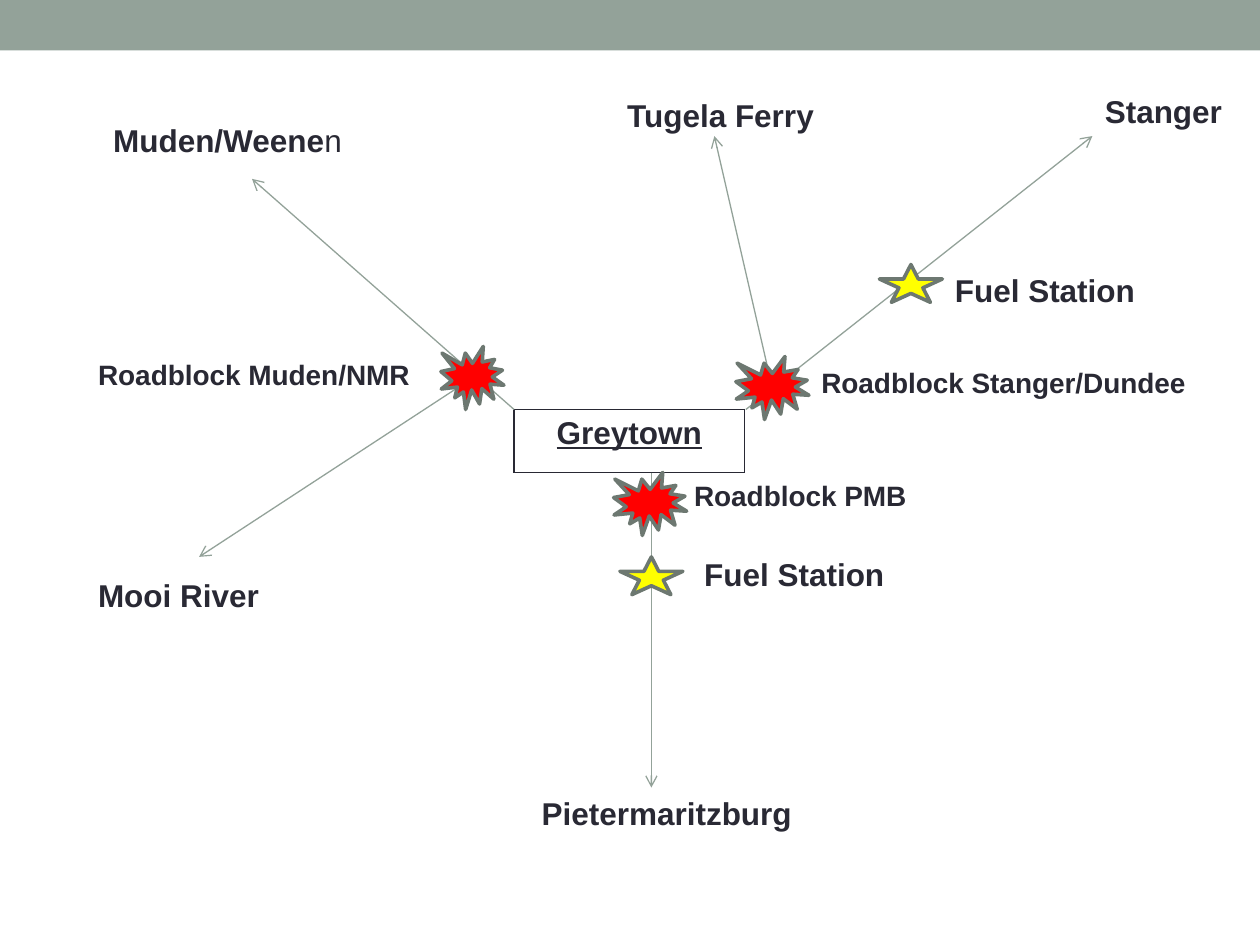
import pptx
import pptx.util
import pptx.dml.color
import pptx.enum.shapes
import pptx.enum.text
import pptx.oxml
import pptx.oxml.ns
from lxml import etree

Inches = pptx.util.Inches
Pt = pptx.util.Pt
SHAPE = pptx.enum.shapes.MSO_SHAPE
COLORS = {"sage": "93A299", "ink": "292934", "edge": "6D7871",
          "red": "FF0000", "yellow": "FFFF00"}


def color(name):
    return pptx.dml.color.RGBColor.from_string(COLORS[name])


def add_sub(parent, tag, **attrs):
    return etree.SubElement(parent, pptx.oxml.ns.qn(tag), attrs)


def set_font(font, size):
    font.name = "Arial"
    font.size = Pt(size)
    font.bold = True
    font.color.rgb = color("ink")


def add_shape(slide, kind, box, fill, edge=None):
    shape = slide.shapes.add_shape(kind, *map(Inches, box))
    shape.shadow.inherit = False
    shape.fill.solid()
    shape.fill.fore_color.rgb = color(fill)
    if edge:
        shape.line.color.rgb = color(edge)
        shape.line.width = Pt(2.08)
    else:
        shape.line.fill.background()


def add_road(slide, start, end):
    road = slide.shapes.add_connector(
        pptx.enum.shapes.MSO_CONNECTOR.STRAIGHT, *map(Inches, start + end))
    road.line.color.rgb = color("sage")
    road.line.width = Pt(0.75)
    add_sub(road.line._get_or_add_ln(), "a:tailEnd", type="arrow")
    add_sub(road._element.spPr, "a:effectLst")


def add_label(slide, text, left, top, width, size=18, plain=""):
    height = 0.4 if size == 18 else 0.37
    label = slide.shapes.add_textbox(*map(Inches, (left, top, width, height)))
    frame = label.text_frame
    frame.word_wrap = False
    frame.auto_size = pptx.enum.text.MSO_AUTO_SIZE.SHAPE_TO_FIT_TEXT
    line = frame.paragraphs[0]
    set_font(line.font, size)
    line.add_run().text = text
    if plain:
        run = line.add_run()
        run.text = plain
        run.font.bold = False


def add_town(slide, text, box):
    frame = slide.shapes.add_table(1, 1, *map(Inches, box))
    cell = frame.table.cell(0, 0)
    cell.text = text
    line = cell.text_frame.paragraphs[0]
    line.alignment = pptx.enum.text.PP_ALIGN.CENTER
    set_font(line.font, 18)
    line.font.underline = True
    props = cell._tc.get_or_add_tcPr()
    for side in ("L", "R", "T", "B"):
        edge = add_sub(props, "a:ln" + side, w=str(Pt(1)))
        fill = add_sub(edge, "a:solidFill")
        add_sub(fill, "a:srgbClr", val=COLORS["ink"])
    cell.fill.background()


def main():
    deck = pptx.Presentation()
    deck.slide_width = Inches(10)
    deck.slide_height = Inches(7.5)
    slide = deck.slides.add_slide(deck.slide_layouts[6])

    # Top band and the town at the centre
    add_shape(slide, SHAPE.RECTANGLE, (0, 0, 10, 0.4), "sage")
    add_town(slide, "Greytown", (4.08, 3.25, 1.83, 0.5))

    # Roads out of town
    for start, end in (
        ((5.17, 3.75), (5.17, 6.25)),
        ((5.92, 3.25), (8.67, 1.08)),
        ((6.13, 3.08), (5.67, 1.08)),
        ((4.08, 3.25), (2, 1.42)),
        ((3.75, 3), (1.58, 4.42)),
    ):
        add_road(slide, start, end)

    # Where the roads lead
    add_label(slide, "Pietermaritzburg", 4.2, 6.25, 2.21)
    add_label(slide, "Stanger", 8.67, 0.68, 1.14)
    add_label(slide, "Tugela Ferry", 4.88, 0.71, 1.7)
    add_label(slide, "Muden/Weene", 0.8, 0.91, 2.03, plain="n")
    add_label(slide, "Mooi River", 0.68, 4.52, 1.49)

    # Fuel stations
    for star, text in (((4.92, 4.42), (5.49, 4.36)),
                       ((6.98, 2.1), (7.48, 2.1))):
        add_shape(slide, SHAPE.STAR_5_POINT, star + (0.5, 0.3),
                  "yellow", "edge")
        add_label(slide, "Fuel Station", *text, 1.65)

    # Roadblocks
    for place, burst, text in (
        ("Stanger/Dundee", (5.84, 2.83, 0.58), (6.42, 2.85, 3.13)),
        ("PMB", (4.87, 3.75, 0.58), (5.41, 3.75, 1.91)),
        ("Muden/NMR", (3.5, 2.75, 0.5), (0.68, 2.79, 2.71)),
    ):
        add_shape(slide, SHAPE.EXPLOSION1, burst + (0.5,), "red", "edge")
        add_label(slide, "Roadblock " + place, *text, size=16)

    deck.save("out.pptx")


if __name__ == "__main__":
    main()
